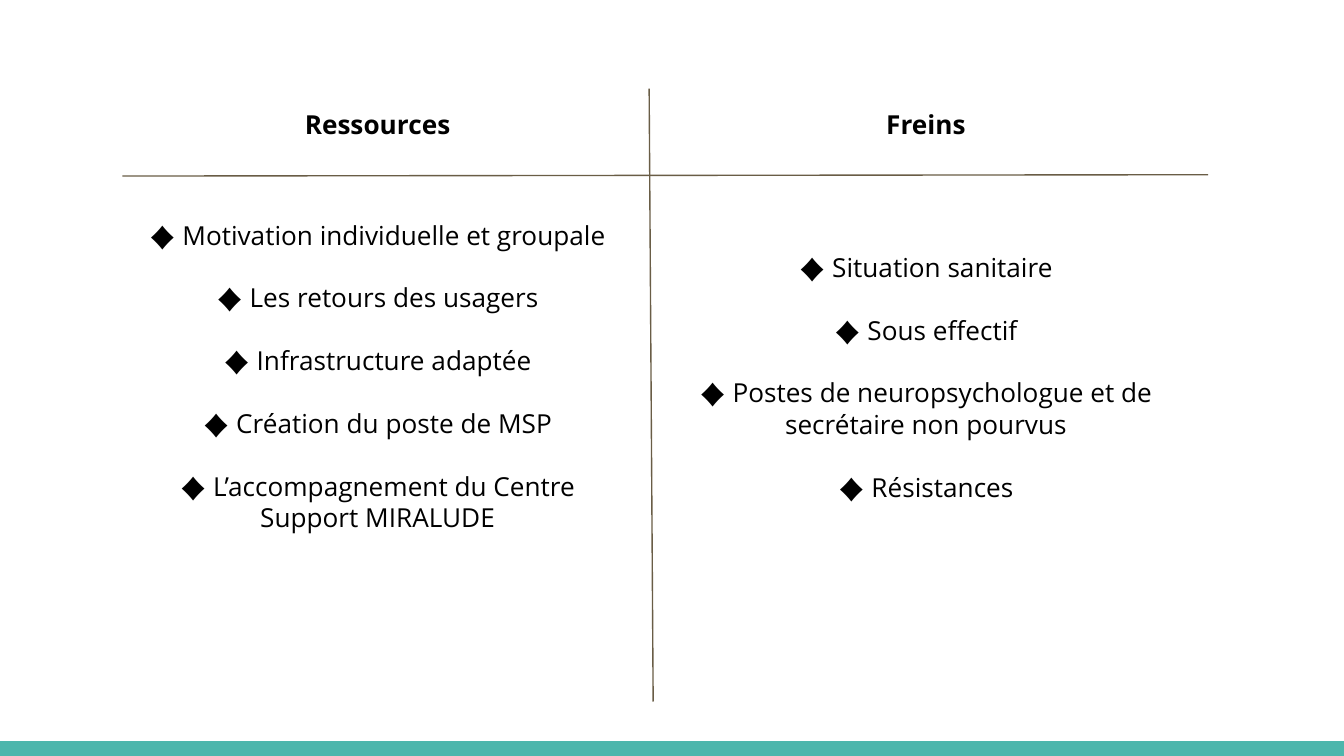
"""Builds a two-column slide that sets resources against obstacles."""
from lxml import etree
from pptx import Presentation
from pptx.dml.color import RGBColor
from pptx.enum.shapes import MSO_CONNECTOR, MSO_SHAPE
from pptx.enum.text import PP_ALIGN
from pptx.oxml.ns import qn
from pptx.util import Inches, Pt

WIDTH = 10
HEIGHT = WIDTH * 9 / 16
FONT, SIZE, PITCH = "Open Sans", 14, 16.8
INK, RULE, BAND = "000000", "695D46", "4DB6AC"
BAND_HEIGHT = 0.11
HEADING_TOP, HEADING_HEIGHT, HEADING_WIDTH = 0.71, 0.44, 3.1
LIST_WIDTH = 3.68

COLUMNS = [
    {
        "heading": "Ressources",
        "centre": 2.81,
        "list_top": 1.53,
        "list_height": 2.79,
        "points": [
            "Motivation individuelle et groupale",
            "Les retours des usagers",
            "Infrastructure adaptée",
            "Création du poste de MSP",
            "L’accompagnement du Centre Support MIRALUDE",
        ],
    },
    {
        "heading": "Freins",
        "centre": 6.89,
        "list_top": 1.77,
        "list_height": 2.09,
        "points": [
            "Situation sanitaire",
            "Sous effectif",
            "Postes de neuropsychologue et de secrétaire non pourvus",
            "Résistances",
        ],
    },
]
RULES = [(4.83, 0.66, 4.86, 5.22), (0.91, 1.31, 8.99, 1.3)]


def colour(hex_value):
    return RGBColor.from_string(hex_value)


def add_band(slide):
    band = slide.shapes.add_shape(
        MSO_SHAPE.RECTANGLE, 0, Inches(HEIGHT - BAND_HEIGHT), Inches(WIDTH), Inches(BAND_HEIGHT)
    )
    band.shadow.inherit = False
    band.fill.solid()
    band.fill.fore_color.rgb = colour(BAND)
    band.line.fill.background()


def add_rule(slide, ends):
    rule = slide.shapes.add_connector(MSO_CONNECTOR.STRAIGHT, *map(Inches, ends))
    rule.line.color.rgb = colour(RULE)
    rule.line.width = Pt(0.75)
    etree.SubElement(rule._element.spPr, qn("a:effectLst"))


def add_text(slide, lines, centre, top, width, height, bold=False):
    box = slide.shapes.add_textbox(
        Inches(centre - width / 2), Inches(top), Inches(width), Inches(height)
    )
    frame = box.text_frame
    frame.word_wrap = True
    frame.margin_left = frame.margin_right = Inches(0.1)
    frame.margin_top = frame.margin_bottom = Inches(0.1)
    frame.text = "\n".join(lines)
    for index, paragraph in enumerate(frame.paragraphs):
        paragraph.alignment = PP_ALIGN.CENTER
        paragraph.line_spacing = Pt(PITCH)
        paragraph.space_before = Pt(PITCH if index else 0)
        font = paragraph.runs[0].font
        font.name, font.size, font.bold = FONT, Pt(SIZE), bold
        font.color.rgb = colour(INK)


def main():
    deck = Presentation()
    deck.slide_width, deck.slide_height = Inches(WIDTH), Inches(HEIGHT)
    slide = deck.slides.add_slide(deck.slide_layouts[6])
    add_band(slide)
    for ends in RULES:
        add_rule(slide, ends)
    for column in COLUMNS:
        centre = column["centre"]
        add_text(slide, [column["heading"]], centre, HEADING_TOP,
                 HEADING_WIDTH, HEADING_HEIGHT, bold=True)
        add_text(slide, [f"♦ {point}" for point in column["points"]], centre,
                 column["list_top"], LIST_WIDTH, column["list_height"])
    deck.save("out.pptx")


if __name__ == "__main__":
    main()
